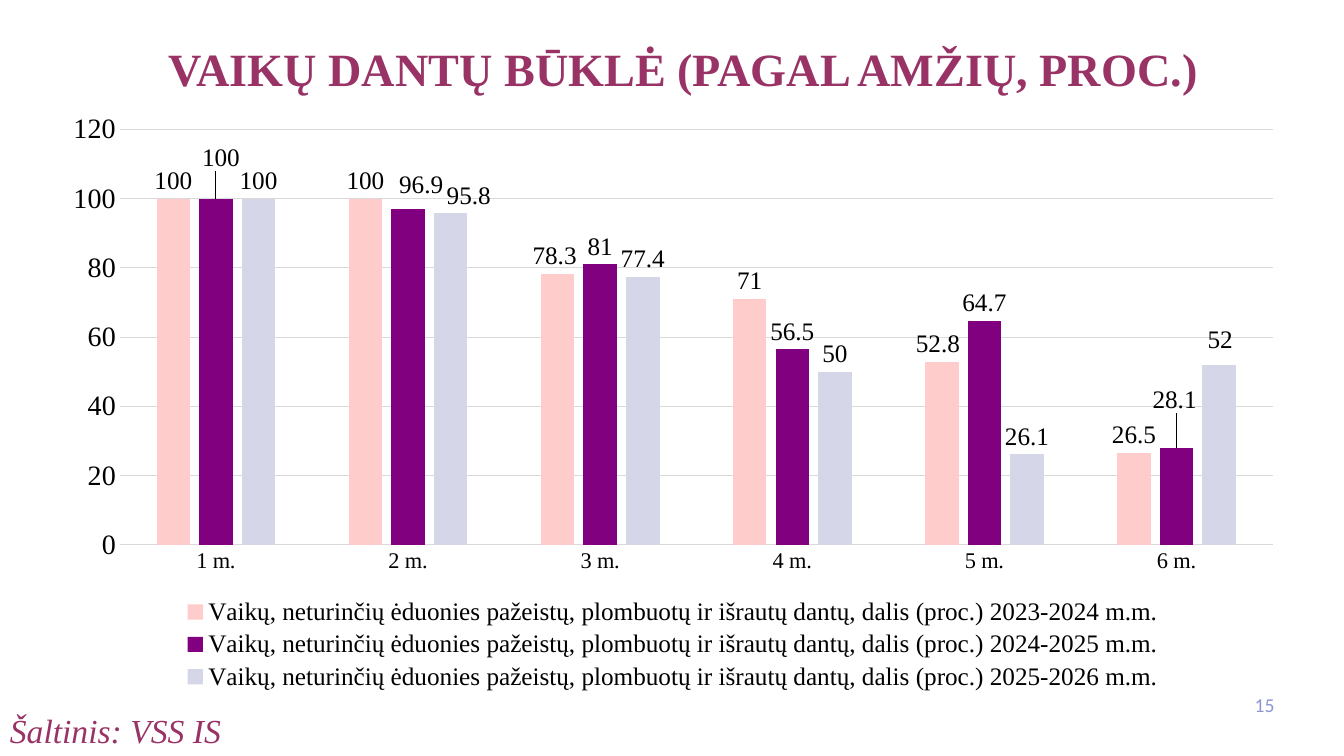
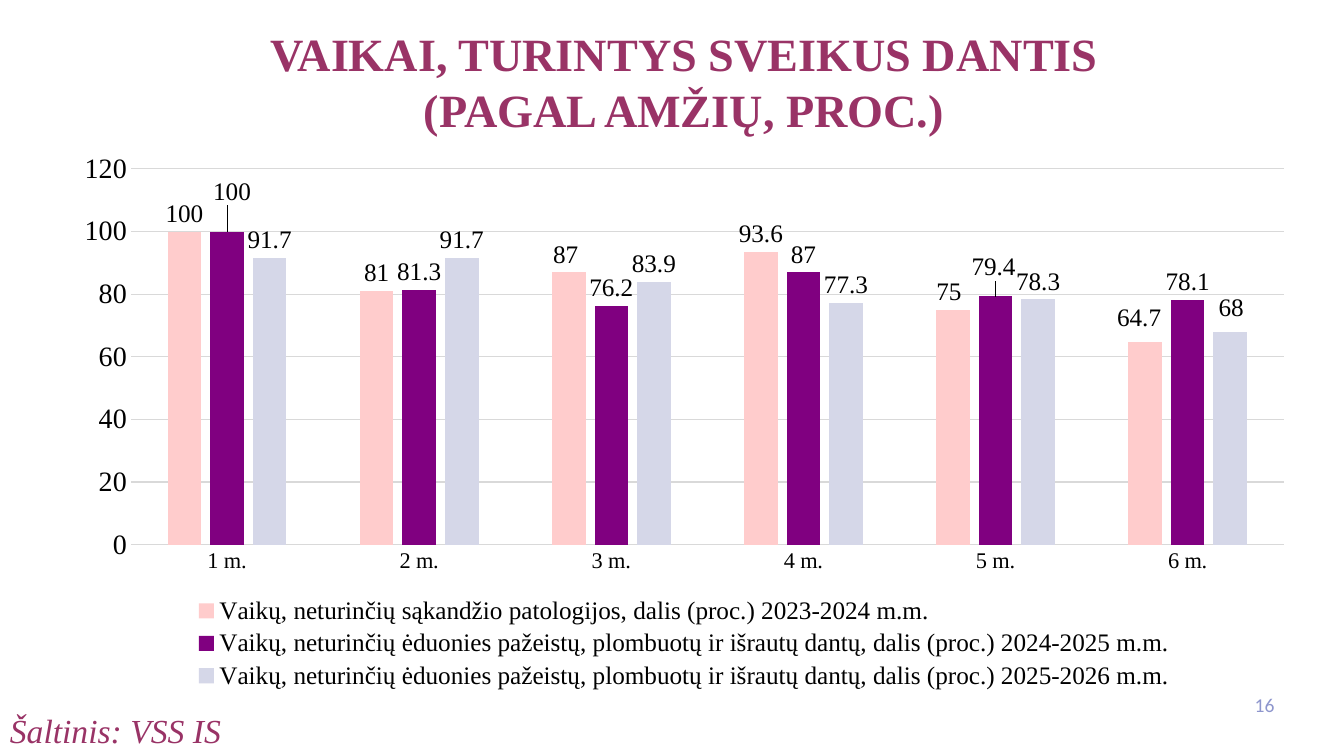
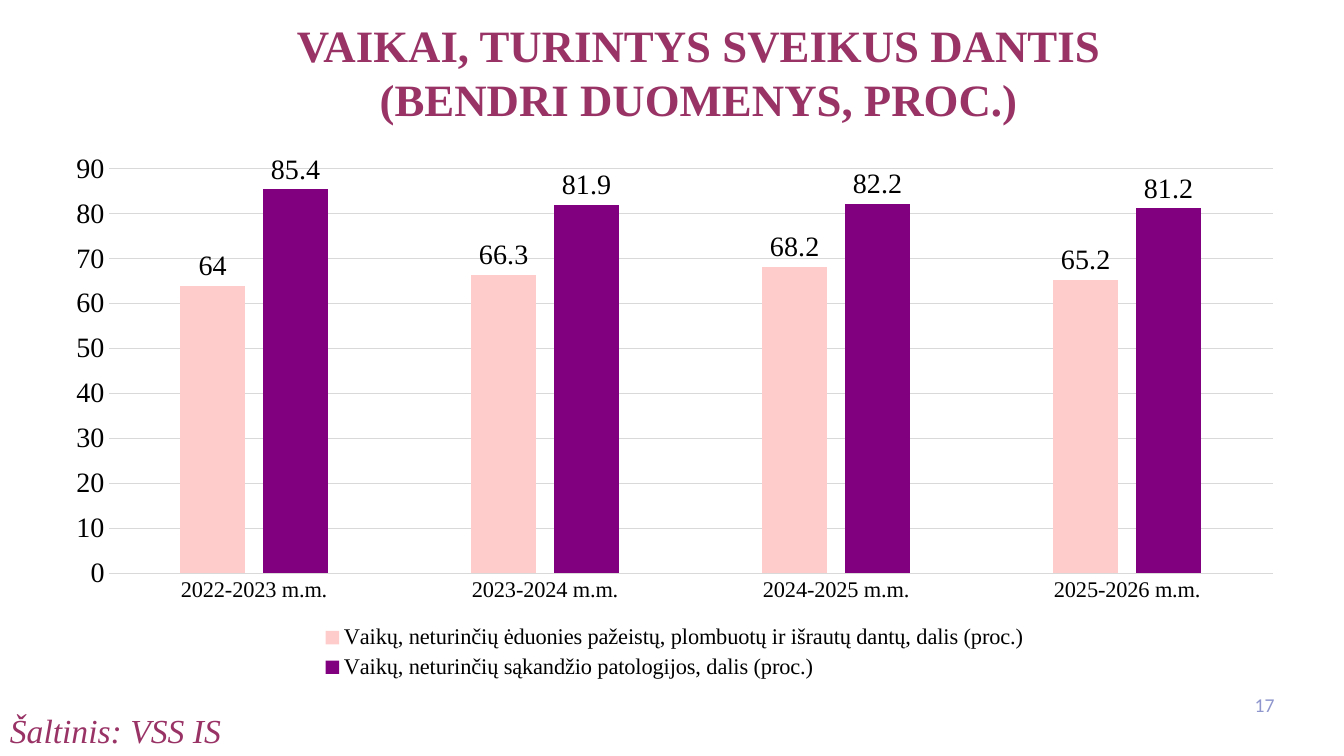
from lxml import etree
from pptx import Presentation
from pptx.chart.data import CategoryChartData
from pptx.dml.color import RGBColor
from pptx.enum.chart import XL_CHART_TYPE, XL_LABEL_POSITION, XL_LEGEND_POSITION, XL_TICK_MARK
from pptx.enum.text import MSO_ANCHOR, PP_ALIGN
from pptx.oxml.ns import qn
from pptx.util import Inches, Pt

COLUMNS = XL_CHART_TYPE.COLUMN_CLUSTERED
OUTSIDE_END = XL_LABEL_POSITION.OUTSIDE_END
BOTTOM = XL_LEGEND_POSITION.BOTTOM
NO_TICK = XL_TICK_MARK.NONE
MIDDLE = MSO_ANCHOR.MIDDLE
LEFT, CENTER, RIGHT = PP_ALIGN.LEFT, PP_ALIGN.CENTER, PP_ALIGN.RIGHT

SERIF, SANS = "Times New Roman", "Calibri"
PLUM, LAVENDER, BLACK, GRID = "993366", "8E96CD", "000000", "D9D9D9"
SERIES_COLORS = ["FFCCCC", "800080", "D5D7E8"]

NO_CARIES = "Vaikų, neturinčių ėduonies pažeistų, plombuotų ir išrautų dantų, dalis (proc.)"
GOOD_BITE = "Vaikų, neturinčių sąkandžio patologijos, dalis (proc.)"
AGES = [f"{age} m." for age in range(1, 7)]
YEARS = [f"{year}-{year + 1} m.m." for year in range(2022, 2026)]
FIRST_NUMBER = 15

SLIDES = [
    {
        "title": "VAIKŲ DANTŲ BŪKLĖ (PAGAL AMŽIŲ, PROC.)",
        "title_box": (0.23, 0.35, 13.1, 0.66),
        "title_size": 33,
        "chart_box": (0.48, 1.01, 12.39, 5.89),
        "categories": AGES,
        "series": [
            (f"{NO_CARIES} {YEARS[1]}", [100, 100, 78.3, 71, 52.8, 26.5]),
            (f"{NO_CARIES} {YEARS[2]}", [100, 96.9, 81, 56.5, 64.7, 28.1]),
            (f"{NO_CARIES} {YEARS[3]}", [100, 95.8, 77.4, 50, 26.1, 52]),
        ],
        "shifts": {
            (0, 2): (-0.03, 0), (0, 4): (-0.04, 0),
            (1, 0): (0.05, -0.23), (1, 1): (0.13, -0.07), (1, 5): (-0.02, -0.3),
            (2, 1): (0.18, 0), (2, 5): (0.01, -0.07),
        },
        "scale": (120, 20),
        "label_size": 18,
        "legend_size": 18,
    },
    {
        "title": "VAIKAI, TURINTYS SVEIKUS DANTIS (PAGAL AMŽIŲ, PROC.)",
        "title_box": (1.79, 0.2, 9.99, 1.21),
        "title_size": 33,
        "chart_box": (0.59, 1.41, 12.39, 5.48),
        "categories": AGES,
        "series": [
            (f"{GOOD_BITE} {YEARS[1]}", [100, 81, 87, 93.6, 75, 64.7]),
            (f"{NO_CARIES} {YEARS[2]}", [100, 81.3, 76.2, 87, 79.4, 78.1]),
            (f"{NO_CARIES} {YEARS[3]}", [91.7, 91.7, 83.9, 77.3, 78.3, 68]),
        ],
        "shifts": {
            (0, 2): (-0.03, 0), (0, 4): (-0.04, 0), (0, 5): (-0.06, -0.06),
            (1, 0): (0.05, -0.22), (1, 4): (-0.02, -0.11),
            (2, 5): (0.01, -0.06),
        },
        "scale": (120, 20),
        "label_size": 18,
        "legend_size": 18,
    },
    {
        "title": "VAIKAI, TURINTYS SVEIKUS DANTIS (BENDRI DUOMENYS, PROC.)",
        "title_box": (1.86, 0.12, 10.14, 1.18),
        "title_size": 32,
        "chart_box": (0.51, 1.41, 12.36, 5.38),
        "categories": YEARS,
        "series": [
            (NO_CARIES, [64, 66.3, 68.2, 65.2]),
            (GOOD_BITE, [85.4, 81.9, 82.2, 81.2]),
        ],
        "shifts": {},
        "scale": (90, 10),
        "label_size": 20,
        "legend_size": 16,
    },
]


def rgb(color):
    return RGBColor.from_string(color)


def style_font(font, size, color=BLACK, name=SERIF, bold=False, italic=False):
    font.name, font.size = name, Pt(size)
    font.bold, font.italic = bold, italic
    font.color.rgb = rgb(color)


def add_text(slide, box, text, size, color, align=LEFT, **style):
    frame = slide.shapes.add_textbox(*map(Inches, box)).text_frame
    frame.word_wrap = True
    frame.vertical_anchor = MIDDLE
    paragraph = frame.paragraphs[0]
    paragraph.alignment = align
    run = paragraph.add_run()
    run.text = text
    style_font(run.font, size, color, **style)


def style_line(line):
    line.color.rgb = rgb(GRID)
    line.width = Pt(0.75)


def style_axes(chart, maximum, step):
    categories, values = chart.category_axis, chart.value_axis
    for axis, size in ((categories, 16), (values, 20)):
        axis.major_tick_mark = axis.minor_tick_mark = NO_TICK
        style_font(axis.tick_labels.font, size)
    categories.has_major_gridlines = False
    style_line(categories.format.line)
    values.minimum_scale, values.maximum_scale, values.major_unit = 0, maximum, step
    values.format.line.fill.background()
    style_line(values.major_gridlines.format.line)


def shift_label(series, point, dx, dy, size):
    label = series.points[point].data_label
    style_font(label.font, size)
    label.position = OUTSIDE_END
    entry = series.data_labels._element.xpath(f'c:dLbl[c:idx/@val="{point}"]')[0]
    layout = etree.Element(qn("c:layout"))
    manual = etree.SubElement(layout, qn("c:manualLayout"))
    for axis, value in (("x", dx), ("y", dy)):
        etree.SubElement(manual, qn(f"c:{axis}")).set("val", f"{value:.4f}")
    entry.insert(1, layout)


def add_columns(slide, content):
    box = content["chart_box"]
    data = CategoryChartData()
    data.categories = content["categories"]
    for name, values in content["series"]:
        data.add_series(name, values)
    chart = slide.shapes.add_chart(COLUMNS, *map(Inches, box), data).chart
    style_font(chart.font, 10, name=SANS)
    chart.has_title = False
    chart.has_legend = True
    chart.legend.position = BOTTOM
    chart.legend.include_in_layout = False
    style_font(chart.legend.font, content["legend_size"])
    style_axes(chart, *content["scale"])
    plot = chart.plots[0]
    plot.gap_width, plot.overlap, plot.vary_by_categories = 219, -27, False
    label_size = content["label_size"]
    for series, color in zip(plot.series, SERIES_COLORS):
        series.format.fill.solid()
        series.format.fill.fore_color.rgb = rgb(color)
        series.invert_if_negative = False
        labels = series.data_labels
        labels.show_value = True
        labels.position = OUTSIDE_END
        style_font(labels.font, label_size)
    for (index, point), (dx, dy) in content["shifts"].items():
        shift_label(plot.series[index], point, dx / box[2], dy / box[3], label_size)


def add_footer(slide, number):
    add_text(slide, (12.22, 6.79, 0.52, 0.4), str(number), 14, LAVENDER, RIGHT, name=SANS)
    add_text(slide, (0, 6.99, 6.67, 0.5), "Šaltinis: VSS IS", 24, PLUM, italic=True)


def main():
    deck = Presentation()
    deck.slide_width, deck.slide_height = Inches(13.33), Inches(7.5)
    for number, content in enumerate(SLIDES, FIRST_NUMBER):
        slide = deck.slides.add_slide(deck.slide_layouts[6])
        add_columns(slide, content)
        add_text(slide, content["title_box"], content["title"], content["title_size"],
                 PLUM, CENTER, bold=True)
        add_footer(slide, number)
    deck.save("out.pptx")


if __name__ == "__main__":
    main()
